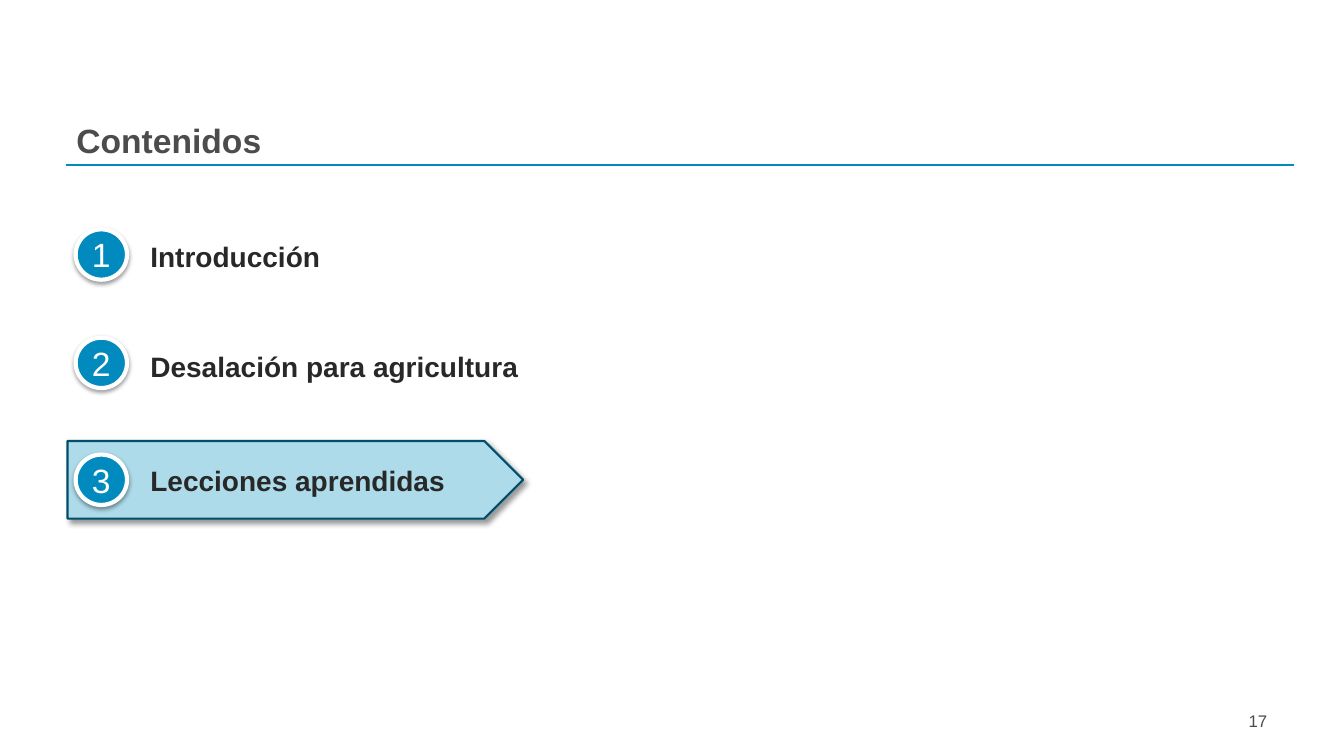
from dataclasses import dataclass

from lxml import etree
from pptx import Presentation, util as u
from pptx.dml.color import RGBColor
from pptx.enum import shapes, text
from pptx.oxml.ns import qn

# Content: label, badge centre row, label centre row
TITLE = "Contenidos"
PAGE_NUMBER = "17"
TOPICS = [
    ("Introducción", 15.15, 15.27),
    ("Desalación para agricultura", 21.6, 21.83),
    ("Lecciones aprendidas", 28.56, 28.61),
]
CURRENT = 2


@dataclass(frozen=True)
class Theme:
    font: str = "Arial"
    accent: str = "008ABD"
    highlight: str = "ADDBE9"
    outline: str = "004E6B"
    ink: str = "272827"
    muted: str = "4C4C4C"
    white: str = "FFFFFF"
    large: int = 24
    label: int = 20
    small: int = 12


THEME = Theme()

# Grid: 80 columns by 45 rows
COLUMNS, ROWS = 80, 45
LEFT, RIGHT = 3.96, 77.04
LABEL_LEFT, LABEL_WIDTH, LABEL_HEIGHT = 8.95, 47, 4.8
BADGE_LEFT, BADGE_WIDTH, BADGE_HEIGHT = 4.5, 3.06, 3
ARROW_WIDTH, ARROW_HEIGHT = 27.12, 4.62
RULE_ROW = 9.84

deck = Presentation()
deck.slide_width, deck.slide_height = u.Inches(13.33), u.Inches(7.5)
page = deck.slides.add_slide(deck.slide_layouts[6])


def place(left, top, width, height):
    column, row = deck.slide_width / COLUMNS, deck.slide_height / ROWS
    return [round(left * column), round(top * row),
            round(width * column), round(height * row)]


def color(value):
    return RGBColor.from_string(value)


def write(box, words, size, ink, bold=False, align="LEFT", anchor="MIDDLE",
          side=0.1):
    frame = box.text_frame
    frame.word_wrap = True
    frame.vertical_anchor = getattr(text.MSO_ANCHOR, anchor)
    frame.margin_left = frame.margin_right = u.Inches(side)
    para = frame.paragraphs[0]
    para.alignment = getattr(text.PP_ALIGN, align)
    span = para.add_run()
    span.text = words
    font = span.font
    font.name, font.size, font.bold = THEME.font, u.Pt(size), bold
    font.color.rgb = color(ink)


def add_text(area, words, **style):
    write(page.shapes.add_textbox(*place(*area)), words, **style)


def add_shadow(shape, alpha, blur, distance, angle):
    shape.shadow.inherit = False
    effects = shape._element.spPr.find(qn("a:effectLst"))
    shadow = etree.SubElement(
        effects, qn("a:outerShdw"), blurRad=str(u.Pt(blur)),
        dist=str(u.Pt(distance)), dir=str(angle * 60000), rotWithShape="0")
    tint = etree.SubElement(shadow, qn("a:srgbClr"), val="000000")
    etree.SubElement(tint, qn("a:alpha"), val=str(alpha * 1000))


def add_solid(kind, area, fill, line, weight, shadow):
    shape = page.shapes.add_shape(kind, *place(*area))
    shape.fill.solid()
    shape.fill.fore_color.rgb = color(fill)
    shape.line.color.rgb = color(line)
    shape.line.width = u.Pt(weight)
    add_shadow(shape, *shadow)
    return shape


# Title and rule
add_text((LEFT, 6.84, 28.2, 3), TITLE, size=THEME.large, ink=THEME.muted,
         bold=True, anchor="TOP")
start_x, rule_y, rule_width, _ = place(LEFT, RULE_ROW, RIGHT - LEFT, 0)
rule = page.shapes.add_connector(shapes.MSO_CONNECTOR.STRAIGHT, start_x, rule_y,
                                 start_x + rule_width, rule_y)
rule.line.color.rgb = color(THEME.accent)
rule.line.width = u.Pt(1.25)
etree.SubElement(rule._element.spPr, qn("a:effectLst"))

# Topics, with an arrow behind the current one
for index, (label, badge_row, label_row) in enumerate(TOPICS):
    if index == CURRENT:
        add_solid(shapes.MSO_SHAPE.PENTAGON,
                  (LEFT + 0.06, badge_row - ARROW_HEIGHT / 2, ARROW_WIDTH,
                   ARROW_HEIGHT),
                  THEME.highlight, THEME.outline, 1.5, (40, 4, 3, 45))
    add_text((LABEL_LEFT, label_row - LABEL_HEIGHT / 2, LABEL_WIDTH,
              LABEL_HEIGHT),
             label, size=THEME.label, ink=THEME.ink, bold=True, side=0)
    badge = add_solid(shapes.MSO_SHAPE.FLOWCHART_CONNECTOR,
                      (BADGE_LEFT, badge_row - BADGE_HEIGHT / 2, BADGE_WIDTH,
                       BADGE_HEIGHT),
                      THEME.accent, THEME.white, 3, (38, 3.1, 1.6, 90))
    write(badge, str(index + 1), size=THEME.large, ink=THEME.white,
          align="CENTER", side=0)

# Page number
add_text((57.36, 41.7, 18.66, 2.4), PAGE_NUMBER, size=THEME.small,
         ink=THEME.muted, align="RIGHT")

deck.save("out.pptx")
